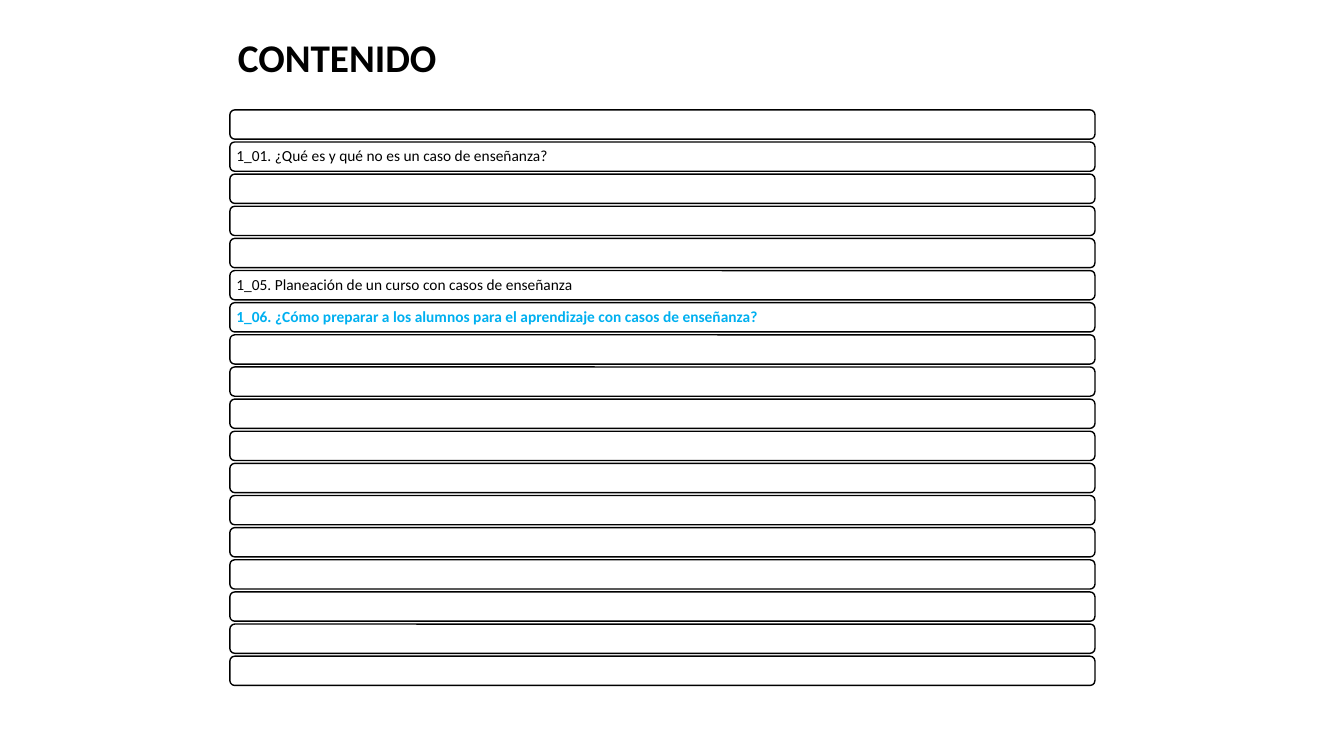
from dataclasses import dataclass

from pptx import Presentation
from pptx.dml.color import RGBColor
from pptx.enum.shapes import MSO_SHAPE
from pptx.enum.text import MSO_ANCHOR, MSO_AUTO_SIZE, PP_ALIGN
from pptx.util import Inches, Pt

ROUND = MSO_SHAPE.ROUNDED_RECTANGLE
MIDDLE = MSO_ANCHOR.MIDDLE
GROW = MSO_AUTO_SIZE.SHAPE_TO_FIT_TEXT
LEFT = PP_ALIGN.LEFT


@dataclass(frozen=True)
class Theme:
    font: str = "Calibri"
    ink: RGBColor = RGBColor(0, 0, 0)
    paper: RGBColor = RGBColor(255, 255, 255)
    accent: RGBColor = RGBColor(0, 176, 240)
    title: Pt = Pt(28)
    body: Pt = Pt(11)
    line: Pt = Pt(1)


@dataclass(frozen=True)
class Grid:
    """A single column of equal rows, in inches."""
    left: float = 2.28
    top: float = 1.09
    width: float = 8.58
    height: float = 0.29
    pitch: float = 5.42 / 17
    rows: int = 18


@dataclass(frozen=True)
class Topic:
    text: str
    active: bool = False


THEME = Theme()
GRID = Grid()
TOPICS = {
    1: Topic("1_01. ¿Qué es y qué no es un caso de enseñanza?"),
    5: Topic("1_05. Planeación de un curso con casos de enseñanza"),
    6: Topic("1_06. ¿Cómo preparar a los alumnos para el aprendizaje "
             "con casos de enseñanza?", active=True),
}


def apply(target, values: dict) -> None:
    for name, value in values.items():
        setattr(target, name, value)


def style(par, size: Pt, color: RGBColor, bold: bool) -> None:
    par.alignment = LEFT
    font = par.runs[0].font
    apply(font, {"name": THEME.font, "size": size, "bold": bold})
    font.color.rgb = color


def add_title(slide, text: str) -> None:
    title = slide.shapes.title
    apply(title, {"left": Inches(2.26), "top": Inches(0.28),
                  "width": Inches(2.19), "height": Inches(0.57)})
    frame = title.text_frame
    frame.text = text
    apply(frame, {"word_wrap": False, "auto_size": GROW,
                  "vertical_anchor": MIDDLE})
    style(frame.paragraphs[0], THEME.title, THEME.ink, True)


def add_bar(slide, row: int):
    bar = slide.shapes.add_shape(
        ROUND, Inches(GRID.left), Inches(GRID.top + row * GRID.pitch),
        Inches(GRID.width), Inches(GRID.height))
    bar.shadow.inherit = False
    bar.fill.solid()
    bar.fill.fore_color.rgb = THEME.paper
    bar.line.color.rgb = THEME.ink
    bar.line.width = THEME.line
    return bar


def add_topic(bar, topic: Topic) -> None:
    frame = bar.text_frame
    frame.text = topic.text
    inset = Inches(0.05)
    apply(frame, {"margin_left": inset, "margin_right": inset,
                  "margin_top": inset, "margin_bottom": inset,
                  "word_wrap": True, "vertical_anchor": MIDDLE})
    par = frame.paragraphs[0]
    par.line_spacing = 0.9
    color = THEME.accent if topic.active else THEME.ink
    style(par, THEME.body, color, topic.active)


def main() -> None:
    deck = Presentation()
    deck.slide_width, deck.slide_height = Inches(13.33), Inches(7.5)
    slide = deck.slides.add_slide(deck.slide_layouts.get_by_name("Title Only"))

    # Heading
    add_title(slide, "CONTENIDO")

    # Stack of topic bars, some still blank
    for row in range(GRID.rows):
        bar = add_bar(slide, row)
        if row in TOPICS:
            add_topic(bar, TOPICS[row])

    deck.save("out.pptx")


if __name__ == "__main__":
    main()
